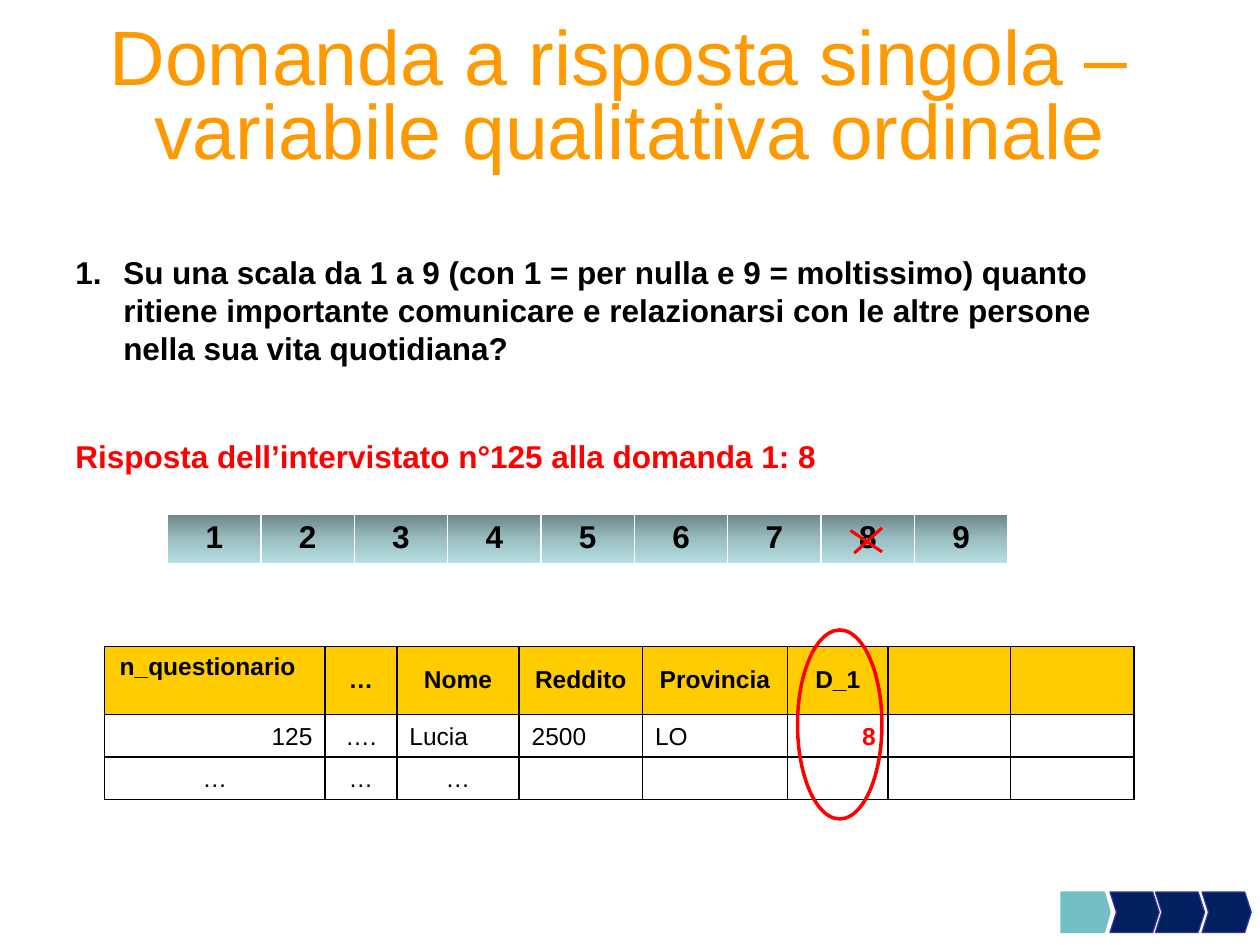
from lxml import etree
from pptx import Presentation
from pptx.dml.color import RGBColor
from pptx.enum import shapes as sh, text as tx
from pptx.oxml import parse_xml
from pptx.oxml.ns import nsdecls, qn
from pptx.util import Inches, Pt

# Content
TITLE = ["Domanda a risposta singola – ", "variabile qualitativa ordinale"]
ASK = ("Su una scala da 1 a 9 (con 1 = per nulla e 9 = moltissimo) quanto ritiene "
       "importante comunicare e relazionarsi con le altre persone nella sua vita quotidiana?")
REPLY = "Risposta dell’intervistato n°125 alla domanda 1: 8"
SCALE = [str(n) for n in range(1, 10)]
ROWS = [
    ["n_questionario", "…", "Nome", "Reddito", "Provincia", "D_1", "", ""],
    ["125", "….", "Lucia", "2500", "LO", "8", "", ""],
    ["…", "…", "…", "", "", "", "", ""],
]
ALIGN = ["lccccccc", "rclllrll", "cccccccc"]
COLS = [1.75, 0.57, 0.97, 0.98, 1.15, 0.8, 0.97, 0.98]
HIGH = [0.54, 0.33, 0.33]
GRAD = [(0, "6D8688"), (50, "9BBFC2"), (100, "B8E3E6")]
CROSS = [(6.75, 4.21, 7, 4.38), (6.78, 4.39, 7, 4.19)]
STEPS = [(8.42, "homePlate"), (8.81, "chevron"), (9.17, "chevron"), (9.54, "chevron")]
RED, BLACK, WHITE = "FF0000", "000000", "FFFFFF"
SIDE = {"l": tx.PP_ALIGN.LEFT, "c": tx.PP_ALIGN.CENTER, "r": tx.PP_ALIGN.RIGHT}


# Helpers
def rgb(code):
    return RGBColor.from_string(code)


def box(*nums):
    return [Inches(n) for n in nums]


def add_run(para, words, size, color=BLACK, bold=False):
    run = para.add_run()
    run.text = words
    font = run.font
    font.name, font.size, font.bold = "Arial", Pt(size), bold
    font.color.rgb = rgb(color)


def set_line(shape, color, width):
    shape.line.color.rgb = rgb(color)
    shape.line.width = Pt(width)


def add_grid(left, top, cols, rows):
    frame = slide.shapes.add_table(len(rows), len(cols),
                                   *box(left, top, sum(cols), sum(rows)))
    grid = frame.table
    grid.first_row = grid.horz_banding = False
    for col, wide in zip(grid.columns, cols):
        col.width = Inches(wide)
    for row, tall in zip(grid.rows, rows):
        row.height = Inches(tall)
    return grid


def set_edges(cell, color, low=1):
    props = cell._tc.get_or_add_tcPr()
    for side, width in (("L", 1), ("R", 1), ("T", 1), ("B", low)):
        props.append(parse_xml(
            f'<a:ln{side} {nsdecls("a")} w="{Pt(width)}"><a:solidFill>'
            f'<a:srgbClr val="{color}"/></a:solidFill></a:ln{side}>'))


def set_grad(cell):
    stops = "".join(f'<a:gs pos="{pos * 1000}"><a:srgbClr val="{code}"/></a:gs>'
                    for pos, code in GRAD)
    cell._tc.get_or_add_tcPr().append(parse_xml(
        f'<a:gradFill {nsdecls("a")}><a:gsLst>{stops}</a:gsLst>'
        '<a:lin ang="5400000" scaled="0"/></a:gradFill>'))


deck = Presentation()
deck.slide_width, deck.slide_height = box(10, 7.5)
slide = deck.slides.add_slide(deck.slide_layouts[5])

# Title
title = slide.shapes.title
title.left, title.top, title.width, title.height = box(0.5, 0.17, 9, 1.25)
title.text_frame.vertical_anchor = tx.MSO_ANCHOR.MIDDLE
para = title.text_frame.paragraphs[0]
para.alignment, para.line_spacing = SIDE["c"], 0.8
add_run(para, TITLE[0], 44, "FF9900")
para.add_line_break()
add_run(para, TITLE[1], 44, "FF9900")

# Data table
data = add_grid(0.83, 5.13, COLS, HIGH)
for r, row in enumerate(ROWS):
    for c, words in enumerate(row):
        cell = data.cell(r, c)
        set_edges(cell, BLACK)
        if r == 0:
            cell.fill.solid()
            cell.fill.fore_color.rgb = rgb("FFCC00")
        else:
            cell.fill.background()
        cell.vertical_anchor = tx.MSO_ANCHOR.BOTTOM if r else tx.MSO_ANCHOR.MIDDLE
        para = cell.text_frame.paragraphs[0]
        para.alignment = SIDE[ALIGN[r][c]]
        mark = (r, c) == (1, 5)
        if words:
            add_run(para, words, 14, RED if mark else BLACK, r == 0 or mark)
        else:
            etree.SubElement(para._p, qn("a:endParaRPr"), sz="1400")
first = data.cell(0, 0)
first.margin_left, first.margin_bottom = box(0.12, 0.26)

# Question and reply
frame = slide.shapes.add_textbox(*box(0.5, 1.96, 8.75, 1.92)).text_frame
frame.word_wrap = True
ask = frame.paragraphs[0]
add_run(ask, ASK, 18, bold=True)
props = ask._p.get_or_add_pPr()
props.set("marL", str(Inches(0.38)))
props.set("indent", str(-Inches(0.38)))
etree.SubElement(props, qn("a:buFont"), typeface="Arial")
etree.SubElement(props, qn("a:buAutoNum"), type="arabicPeriod")
reply = frame.add_paragraph()
reply.space_before = Pt(40)
add_run(reply, REPLY, 18, RED, True)

# Answer scale
scale = add_grid(1.33, 4.08, [6.67 / len(SCALE)] * len(SCALE), [0.41])
for c, words in enumerate(SCALE):
    cell = scale.cell(0, c)
    set_edges(cell, WHITE, 3)
    set_grad(cell)
    para = cell.text_frame.paragraphs[0]
    para.alignment = SIDE["c"]
    add_run(para, words, 18, bold=True)

# Cross on the chosen answer
cross = slide.shapes.add_group_shape()
for ends in CROSS:
    line = cross.shapes.add_connector(sh.MSO_CONNECTOR.STRAIGHT, *box(*ends))
    set_line(line, RED, 1.75)
    etree.SubElement(line._element.spPr, qn("a:effectLst"))

# Ring around the answer column
ring = slide.shapes.add_shape(sh.MSO_SHAPE.OVAL, *box(6.33, 5, 0.67, 1.5))
ring.shadow.inherit = False
ring.fill.background()
set_line(ring, RED, 2)

# Progress arrows
LOOK = {"homePlate": (sh.MSO_SHAPE.PENTAGON, 0.14, "72BFC5", "72BFC5"),
        "chevron": (sh.MSO_SHAPE.CHEVRON, 0.16, "002060", "333399")}
for left, kind in STEPS:
    form, bend, fill, edge = LOOK[kind]
    step = slide.shapes.add_shape(form, *box(left, 7.08, 0.39, 0.32))
    step.shadow.inherit = False
    step.adjustments[0] = bend
    step.fill.solid()
    step.fill.fore_color.rgb = rgb(fill)
    set_line(step, edge, 0.75)

deck.save("out.pptx")
